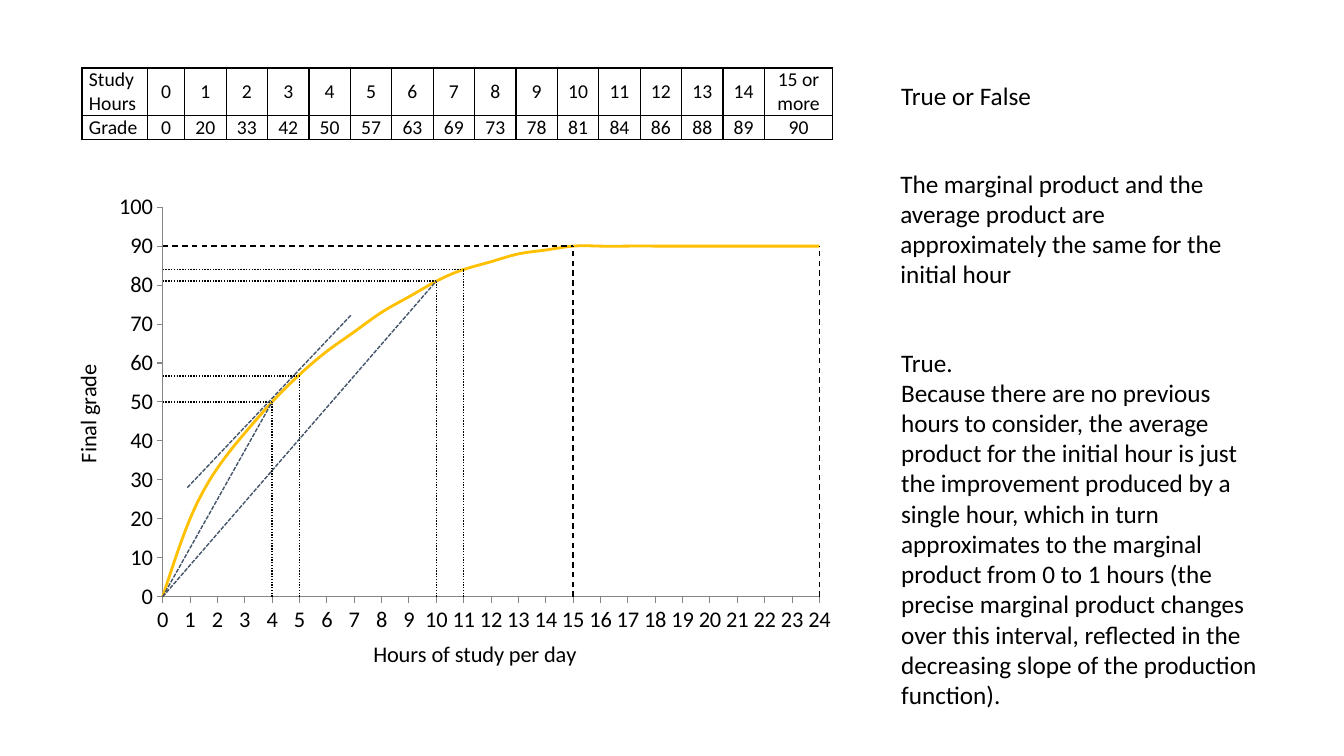
from lxml.etree import SubElement
from pptx import Presentation
from pptx.chart.data import XyChartData
from pptx.dml.color import RGBColor
from pptx.enum.chart import XL_CHART_TYPE as ChartType, XL_TICK_MARK as Tick
from pptx.enum.dml import MSO_LINE as Dash
from pptx.enum.shapes import MSO_CONNECTOR as Connector
from pptx.enum.text import MSO_ANCHOR as Anchor, PP_ALIGN as Align
from pptx.oxml import parse_xml
from pptx.oxml.ns import nsdecls, qn
from pptx.util import Inches, Pt

COLUMNS, ROWS = 160, 90
PLOT = {"x": 0.121, "y": 0.028, "w": 0.844, "h": 0.809}
MAX_HOURS, MAX_GRADE = 24, 100
CHART_BOX = (8.16, 23.04, 92.64, 57.36)

TABLE_GRADES = [0, 20, 33, 42, 50, 57, 63, 69, 73, 78, 81, 84, 86, 88, 89, 90]
CURVE_GRADES = [0, 20, 33, 42, 50, 57, 63, 68, 73, 77, 81, 84, 86, 88, 89] + [90] * 10
STUDY_TABLE = [
    ["Study Hours", *range(15), "15 or more"],
    ["Grade", *TABLE_GRADES],
]
HOUR_WIDTHS = [7.8, 4.44] + [4.93] * 14 + [8.14]

DROP_LINES = [
    (5, 56.6, Dash.ROUND_DOT),
    (4, 50, Dash.ROUND_DOT),
    (11, 84, Dash.ROUND_DOT),
    (10, 81, Dash.ROUND_DOT),
    (15, 90, Dash.DASH),
]
SLOPES = [((0, 0), (4, 50)), ((0, 0), (10, 81)), ((0.9, 28), (6.9, 72.4))]

QUESTION = ["True or False"]
STATEMENT = [
    "The marginal product and the average product are approximately "
    "the same for the initial hour"
]
ANSWER = [
    "True.",
    "Because there are no previous hours to consider, the average product for "
    "the initial hour is just the improvement produced by a single hour, which "
    "in turn approximates to the marginal product from 0 to 1 hours (the precise "
    "marginal product changes over this interval, reflected in the decreasing "
    "slope of the production function).",
]


def rgb(hex_code):
    return RGBColor.from_string(hex_code)


def apply(target, values):
    for name, value in values.items():
        setattr(target, name, value)


class GradeSlide:
    ink, curve, slope, axis = "000000", "FFC000", "44546A", "868686"

    def __init__(self, deck):
        self.shapes = deck.slides.add_slide(deck.slide_layouts[6]).shapes
        self.column = deck.slide_width / COLUMNS
        self.row = deck.slide_height / ROWS

    def across(self, columns):
        return round(columns * self.column)

    def down(self, rows):
        return round(rows * self.row)

    def box(self, left, top, width, height):
        return (self.across(left), self.down(top),
                self.across(width), self.down(height))

    def style(self, font, size):
        apply(font, {"name": "Calibri", "size": Pt(size), "bold": False})
        font.color.rgb = rgb(self.ink)

    def text(self, place, paragraphs):
        frame = self.shapes.add_textbox(*self.box(*place)).text_frame
        frame.word_wrap = True
        for index, wording in enumerate(paragraphs):
            paragraph = frame.add_paragraph() if index else frame.paragraphs[0]
            run = paragraph.add_run()
            run.text = wording
            self.style(run.font, 18)

    def point(self, hour, grade):
        left, top, width, height = CHART_BOX
        column = left + width * (PLOT["x"] + PLOT["w"] * hour / MAX_HOURS)
        row = top + height * (PLOT["y"] + PLOT["h"] * (1 - grade / MAX_GRADE))
        return self.across(column), self.down(row)

    def guide(self, start, end, color, dash):
        line = self.shapes.add_connector(
            Connector.STRAIGHT, *self.point(*start), *self.point(*end))
        apply(line.line, {"width": Pt(1), "dash_style": dash})
        line.line.color.rgb = rgb(color)
        SubElement(line._element.spPr, qn("a:effectLst"))

    def production_chart(self):
        data = XyChartData()
        production = data.add_series("Series 1")
        for hour, grade in enumerate(CURVE_GRADES):
            production.add_data_point(hour, grade)
        chart = self.shapes.add_chart(
            ChartType.XY_SCATTER_SMOOTH_NO_MARKERS,
            *self.box(*CHART_BOX), data).chart
        apply(chart, {"has_legend": False, "has_title": False})
        self.style(chart.font, 16)
        plot = chart.plots[0]
        plot.vary_by_categories = False
        curve = plot.series[0].format.line
        curve.width = Pt(2)
        curve.color.rgb = rgb(self.curve)
        for smooth in chart._chartSpace.iter(qn("c:smooth")):
            smooth.set("val", "1")
        self.scale(chart.category_axis, "Hours of study per day", MAX_HOURS, 1)
        self.scale(chart.value_axis, "Final grade", MAX_GRADE, 10)
        self.fix_plot(chart)

    def scale(self, axis, title, maximum, step):
        apply(axis, {
            "minimum_scale": 0, "maximum_scale": maximum, "major_unit": step,
            "has_major_gridlines": False, "has_minor_gridlines": False,
            "major_tick_mark": Tick.OUTSIDE, "minor_tick_mark": Tick.NONE,
        })
        axis.format.line.width = Pt(0.75)
        axis.format.line.color.rgb = rgb(self.axis)
        apply(axis.tick_labels, {"number_format": "General",
                                 "number_format_is_linked": False})
        self.style(axis.tick_labels.font, 16)
        run = axis.axis_title.text_frame.paragraphs[0].add_run()
        run.text = title
        self.style(run.font, 16)

    def fix_plot(self, chart):
        area = chart._chartSpace.chart.plotArea
        for layout in area.findall(qn("c:layout")):
            area.remove(layout)
        shares = "".join(f'<c:{k} val="{v}"/>' for k, v in PLOT.items())
        area.insert(0, parse_xml(
            f'<c:layout {nsdecls("c")}><c:manualLayout>'
            '<c:layoutTarget val="inner"/><c:xMode val="edge"/>'
            f'<c:yMode val="edge"/>{shares}</c:manualLayout></c:layout>'))

    def grade_table(self, left, top, widths, heights, content):
        place = self.box(left, top, sum(widths), sum(heights))
        table = self.shapes.add_table(len(heights), len(widths), *place).table
        apply(table, {"first_row": False, "horz_banding": False})
        for column, width in zip(table.columns, widths):
            column.width = self.across(width)
        for row, height, values in zip(table.rows, heights, content):
            row.height = self.down(height)
            for index, (cell, value) in enumerate(zip(row.cells, values)):
                self.fill_cell(cell, str(value), index == 0)

    def fill_cell(self, cell, wording, is_label):
        apply(cell, {
            "margin_left": Inches(0.07), "margin_right": Inches(0.07),
            "margin_top": 0, "margin_bottom": 0,
            "vertical_anchor": Anchor.TOP if is_label else Anchor.MIDDLE,
        })
        cell.fill.background()
        paragraph = cell.text_frame.paragraphs[0]
        paragraph.alignment = Align.LEFT if is_label else Align.CENTER
        run = paragraph.add_run()
        run.text = wording
        self.style(run.font, 14)
        for order, side in enumerate("LRTB"):
            cell._tc.get_or_add_tcPr().insert(order, parse_xml(
                f'<a:ln{side} {nsdecls("a")} w="{Pt(1)}"><a:solidFill>'
                f'<a:srgbClr val="{self.ink}"/></a:solidFill></a:ln{side}>'))


def main():
    deck = Presentation()
    apply(deck, {"slide_width": Inches(13.33), "slide_height": Inches(7.5)})
    slide = GradeSlide(deck)
    slide.production_chart()
    for hour, grade, dash in DROP_LINES:
        for foot in ((hour, 0), (0, grade)):
            slide.guide(foot, (hour, grade), slide.ink, dash)
    slide.guide((24, 0), (24, 90), slide.ink, Dash.DASH)
    for start, end in SLOPES:
        slide.guide(start, end, slide.slope, Dash.SQUARE_DOT)
    slide.grade_table(9.76, 8.1, HOUR_WIDTHS, [5.6, 2.85], STUDY_TABLE)
    slide.text((106.1, 9, 41.8, 4.8), QUESTION)
    slide.text((106, 19.4, 44.6, 15.7), STATEMENT)
    slide.text((106.1, 40.7, 46.8, 44.9), ANSWER)
    deck.save("out.pptx")


if __name__ == "__main__":
    main()
